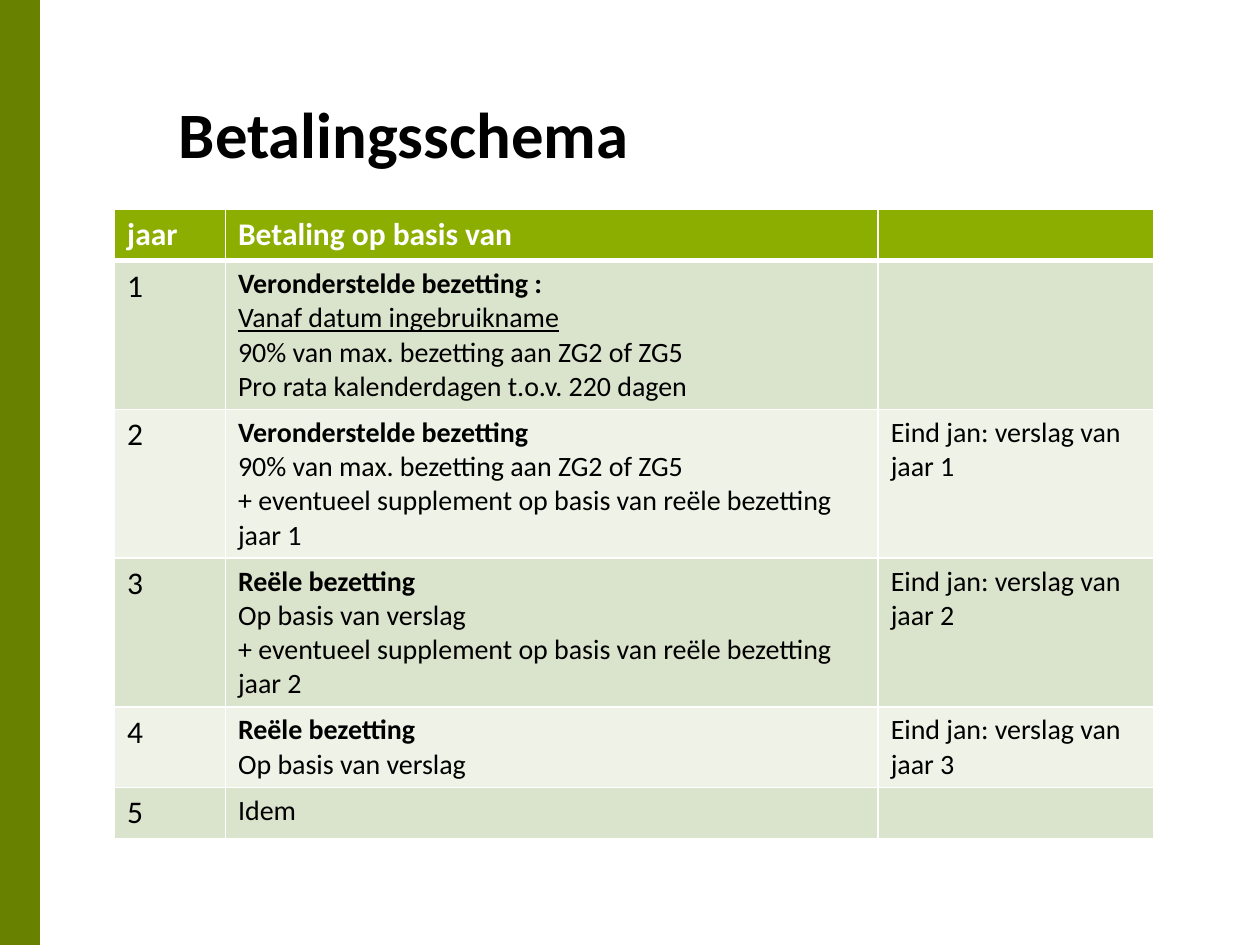
from lxml import etree
from pptx import Presentation, util as u
from pptx.dml.color import RGBColor
from pptx.enum import shapes, text
from pptx.oxml import ns

WHITE = RGBColor(0xFF, 0xFF, 0xFF)
BLACK = RGBColor(0x00, 0x00, 0x00)
DARK_GREEN = RGBColor(0x68, 0x82, 0x00)
HEADER_GREEN = RGBColor(0x8B, 0xAE, 0x00)
BAND_DARK = RGBColor(0xDA, 0xE3, 0xCC)
BAND_LIGHT = RGBColor(0xEE, 0xF2, 0xE7)


def add_text(para, words, size, color, **formats):
    """Add one run in the slide's font."""
    span = para.add_run()
    span.text = words
    span.font.color.rgb = color
    values = {"name": "Calibri", "size": u.Pt(size), **formats}
    for name, value in values.items():
        setattr(span.font, name, value)


def set_borders(cell, widths):
    """Draw white borders, which must come before the fill."""
    properties = cell._tc.get_or_add_tcPr()
    for position, (side, width) in enumerate(widths.items()):
        line = etree.Element(ns.qn(f"a:ln{side}"), w=str(u.Pt(width)))
        fill = etree.SubElement(line, ns.qn("a:solidFill"))
        etree.SubElement(fill, ns.qn("a:srgbClr"), val=str(WHITE))
        properties.insert(position, line)


deck = Presentation()
deck.slide_width, deck.slide_height = u.Inches(10), u.Inches(7.5)
page = deck.slides.add_slide(deck.slide_layouts[6])

# Green bar on the left
bar = page.shapes.add_shape(
    shapes.MSO_SHAPE.RECTANGLE, 0, 0, u.Inches(0.31), deck.slide_height)
bar.shadow.inherit = False
bar.fill.solid()
bar.fill.fore_color.rgb = DARK_GREEN
bar.line.color.rgb = DARK_GREEN
bar.line.width = u.Pt(1)

# Title
title = page.shapes.add_textbox(
    u.Inches(1.42), u.Inches(0.83), u.Inches(8.11), u.Inches(0.7))
frame_formats = {
    "word_wrap": True, "vertical_anchor": text.MSO_ANCHOR.TOP,
    "margin_left": 0, "margin_right": 0, "margin_top": 0, "margin_bottom": 0}
for name, value in frame_formats.items():
    setattr(title.text_frame, name, value)
title_para = title.text_frame.paragraphs[0]
title_para.line_spacing = u.Pt(38)
add_text(title_para, "Betalingsschema", 37, BLACK, bold=True)

# Payment table: year, basis lines, report
OCCUPANCY = "90% van max. bezetting aan ZG2 of ZG5"
SUPPLEMENT = "+ eventueel supplement op basis van reële bezetting jaar"
REPORT = "Eind jan: verslag van jaar"
rows = [
    ("jaar", ["Betaling op basis van"], ""),
    ("1", ["Veronderstelde bezetting :", "Vanaf datum ingebruikname", OCCUPANCY,
           "Pro rata kalenderdagen t.o.v. 220 dagen"], ""),
    ("2", ["Veronderstelde bezetting", OCCUPANCY, f"{SUPPLEMENT} 1"], f"{REPORT} 1"),
    ("3", ["Reële bezetting", "Op basis van verslag", f"{SUPPLEMENT} 2"], f"{REPORT} 2"),
    ("4", ["Reële bezetting", "Op basis van verslag"], f"{REPORT} 3"),
    ("5", ["Idem"], ""),
]
column_widths = [0.88, 5.18, 2.19]
row_heights = [0.41, 1.18, 1.18, 1.18, 0.64, 0.41]
table = page.shapes.add_table(
    len(rows), len(column_widths), u.Inches(0.91), u.Inches(1.66),
    u.Inches(sum(column_widths)), u.Inches(sum(row_heights))).table
for column, width in zip(table.columns, column_widths):
    column.width = u.Inches(width)
for row, height in zip(table.rows, row_heights):
    row.height = u.Inches(height)

for r, (year, basis, report) in enumerate(rows):
    header = r == 0
    band = HEADER_GREEN if header else BAND_DARK if r % 2 else BAND_LIGHT
    for c, lines in enumerate([[year], basis, [report]]):
        cell = table.cell(r, c)
        cell.fill.solid()
        cell.fill.fore_color.rgb = band
        set_borders(cell, {"L": 1, "R": 1, "T": 3 if r == 1 else 1,
                           "B": 3 if header else 1})
        for i, words in enumerate(lines):
            if not words:
                continue
            frame = cell.text_frame
            para = frame.add_paragraph() if i else frame.paragraphs[0]
            heading = c == 1 and i == 0 and len(lines) > 1
            add_text(para, words, 18 if header or c == 0 else 16,
                     WHITE if header else BLACK, bold=header or heading,
                     underline=words.startswith("Vanaf"))

deck.save("out.pptx")
